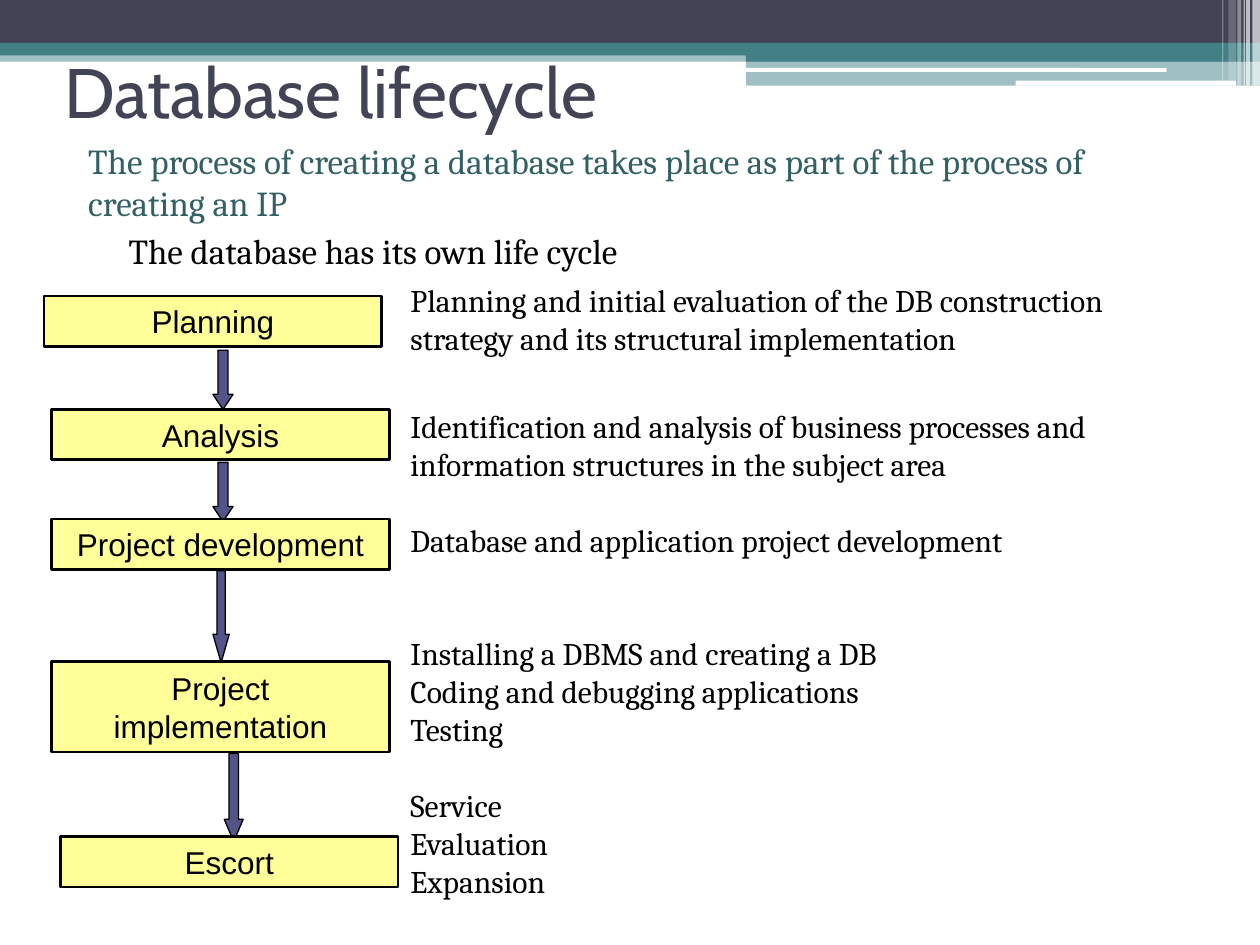
from lxml import etree
from pptx import Presentation
from pptx import util as u
from pptx.dml.color import RGBColor
from pptx.enum import shapes, text
from pptx.oxml.ns import qn

SCALE = 9144  # EMU in one px: 100 px to the inch
NAVY, TEAL, WHITE, BLACK = "424456", "438086", "FFFFFF", "000000"
KIND = shapes.MSO_SHAPE
ALIGN = text.PP_ALIGN


def px(length):
    return u.Emu(length * SCALE)


def colour(value):
    return RGBColor.from_string(value)


def place(item, left, top, width, height):
    item.left, item.top = px(left), px(top)
    item.width, item.height = px(width), px(height)


def add_shape(page, kind, box, fill, opacity=100, line=None):
    """Add a filled shape; line is the outline width in points."""
    shape = page.shapes.add_shape(kind, *map(px, box))
    shape.shadow.inherit = False
    shape.fill.solid()
    shape.fill.fore_color.rgb = colour(fill)
    if opacity < 100:
        value = shape.fill._xPr.find(".//" + qn("a:srgbClr"))
        etree.SubElement(value, qn("a:alpha"), val=str(opacity * 1000))
    if line:
        shape.line.color.rgb = colour(BLACK)
        shape.line.width = u.Pt(line)
    else:
        shape.line.fill.background()
    return shape


def write(frame, words, font="Cambria", size=18, fill=BLACK, align=ALIGN.LEFT,
          before=0, level=0, indent=0, first=False):
    """Write one paragraph without a bullet."""
    para = frame.paragraphs[0] if first else frame.add_paragraph()
    props = para._p.get_or_add_pPr()
    props.set("marL", str(px(indent)))
    props.set("indent", "0")
    etree.SubElement(props, qn("a:buNone"))
    para.level = level
    para.alignment = align
    para.space_before = u.Pt(before)
    span = para.add_run()
    span.text = words
    span.font.name = font
    span.font.size = u.Pt(size)
    span.font.color.rgb = colour(fill)


def set_frame(frame, anchor):
    frame.word_wrap = True
    frame.auto_size = text.MSO_AUTO_SIZE.NONE
    frame.vertical_anchor = anchor


def draw_header(page, left, top, width):
    # Bands: offset, width, height, colour, opacity
    right = width - 592
    for x, y, wide, high, fill, opacity in [
        (0, 40, width, 9, TEAL, 50),
        (0, 0, width, 34, NAVY, 100),
        (0, 34, width, 10, TEAL, 100),
        (592, 39, right, 10, TEAL, 100),
        (592, 48, right, 20, TEAL, 50),
    ]:
        add_shape(page, KIND.RECTANGLE, (left + x, top + y, wide, high), fill, opacity)
    # White rules
    for x, y, wide, high in [(591, 54, 335, 3), (806, 64, 175, 4)]:
        add_shape(page, KIND.ROUNDED_RECTANGLE, (left + x, top + y, wide, high), WHITE)
    # Translucent stripes at the right edge
    for x, wide, high, opacity in [
        (994, 6, 68, 65), (989, 3, 68, 65), (987, 1, 68, 60),
        (982, 3, 68, 40), (975, 6, 64, 20), (970, 1, 64, 30),
    ]:
        add_shape(page, KIND.RECTANGLE, (left + x, top, wide, high), WHITE, opacity)


def fill_title(page, box):
    title = page.shapes.title
    page.shapes._spTree.append(title._element)  # in front of the header
    place(title, *box)
    set_frame(title.text_frame, text.MSO_ANCHOR.MIDDLE)
    write(title.text_frame, "Database lifecycle", font="Cabin", size=40,
          fill=NAVY, first=True)


def fill_body(page, box):
    body = page.placeholders[1]
    page.shapes._spTree.append(body._element)
    place(body, *box)
    set_frame(body.text_frame, text.MSO_ANCHOR.TOP)
    write(body.text_frame, "The process of creating a database takes place as part "
          "of the process of creating an IP", size=20, fill="326065",
          indent=12, first=True)
    write(body.text_frame, "The database has its own life cycle", size=20,
          before=3, level=1, indent=44)


def add_descriptions(page, box):
    area = page.shapes.add_textbox(*map(px, box))
    set_frame(area.text_frame, text.MSO_ANCHOR.TOP)
    stages = [
        (0, ["Planning and initial evaluation of the DB construction strategy "
             "and its structural implementation"]),
        (29, ["Identification and analysis of business processes and "
              "information structures in the subject area"]),
        (22, ["Database and application project development"]),
        (43, ["Installing a DBMS and creating a DB",
              "Coding and debugging applications", "Testing"]),
        (22, ["Service", "Evaluation", "Expansion"]),
    ]
    for stage, (gap, lines) in enumerate(stages):
        for number, words in enumerate(lines):
            write(area.text_frame, words, before=0 if number else gap,
                  first=stage == number == 0)


def draw_flow(page, left, top):
    # Arrows: offset, size, head length relative to width
    for x, y, wide, high, head in [
        (134, 43, 16, 47, 0.75), (134, 132, 16, 47, 0.75),
        (134, 218, 13, 73, 1.74), (143, 363, 15, 70, 1.18),
    ]:
        arrow = add_shape(page, KIND.DOWN_ARROW, (left + x, top + y, wide, high),
                          "53548A", line=0.75)
        arrow.adjustments[0] = 0.5
        arrow.adjustments[1] = head
    # Stage boxes: offset, height, label
    for x, y, high, label in [
        (0, 0, 40, "Planning"), (6, 90, 40, "Analysis"),
        (6, 177, 40, "Project development"),
        (6, 290, 72, "Project implementation"), (13, 429, 40, "Escort"),
    ]:
        stage = add_shape(page, KIND.RECTANGLE, (left + x, top + y, 268, high),
                          "FFFF99", line=1.5)
        set_frame(stage.text_frame, text.MSO_ANCHOR.MIDDLE)
        write(stage.text_frame, label, font="Arial", align=ALIGN.CENTER, first=True)


def main():
    deck = Presentation()
    deck.slide_width, deck.slide_height = px(1000), px(750)
    page = deck.slides.add_slide(deck.slide_layouts[1])
    draw_header(page, 0, 0, 1000)
    fill_title(page, (41, 13, 900, 117))
    fill_body(page, (48, 106, 900, 150))
    add_descriptions(page, (316, 218, 617, 505))
    draw_flow(page, 35, 235)
    deck.save("out.pptx")


if __name__ == "__main__":
    main()
